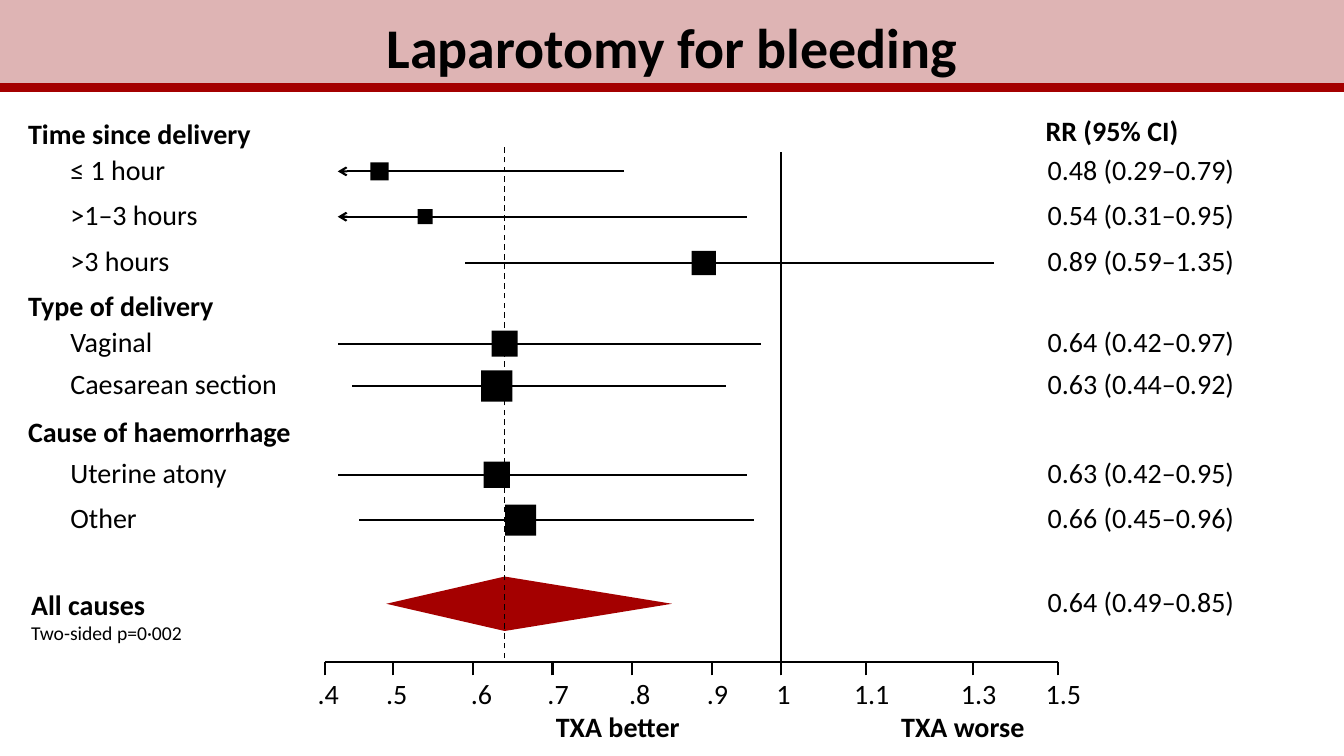
from dataclasses import dataclass
from itertools import pairwise

from lxml.etree import SubElement
from pptx import Presentation
from pptx.dml.color import RGBColor
from pptx.enum.dml import MSO_LINE_DASH_STYLE as Dash
from pptx.enum.shapes import MSO_CONNECTOR as Connector, MSO_SHAPE as Shape
from pptx.enum.text import MSO_ANCHOR as Anchor, PP_ALIGN as Align
from pptx.oxml.ns import qn
from pptx.util import Inches, Pt


@dataclass(frozen=True)
class Theme:
    font: str = "Calibri"
    black: RGBColor = RGBColor(0x00, 0x00, 0x00)
    red: RGBColor = RGBColor(0xA4, 0x00, 0x00)
    pink: RGBColor = RGBColor(0xDE, 0xB4, 0xB4)
    title: int = 40
    body: int = 20
    note: int = 14


THEME = Theme()
WIDTH, HEIGHT = 13.33, 7.5
AXIS_Y, TICK_END = 6.57, 6.7
CLIP_X = 3.35
VALUES_RIGHT = 12.34
TEXT_HEIGHT = 0.5
TEXT_RISE = 0.24  # from the top of a text box to the centre of its row

# value, x of the tick, left of its label, label
TICKS = [
    (0.4, 3.22, 3.15, ".4"), (0.5, 3.9, 3.83, ".5"), (0.6, 4.69, 4.67, ".6"),
    (0.7, 5.48, 5.43, ".7"), (0.8, 6.27, 6.24, ".8"), (0.9, 7.06, 7.01, ".9"),
    (1.0, 7.75, 7.7, "1"), (1.1, 8.59, 8.47, "1.1"), (1.3, 9.65, 9.53, "1.3"),
    (1.5, 10.49, 10.37, "1.5"),
]
HEADINGS = [
    ("Time since delivery", 1.11),
    ("Type of delivery", 2.81),
    ("Cause of haemorrhage", 4.06),
]
# label, centre of the row, ratio, low, high, size of the square
SUBGROUPS = [
    ("≤ 1 hour", 1.7, 0.48, 0.29, 0.79, 0.18),
    (">1–3 hours", 2.15, 0.54, 0.31, 0.95, 0.15),
    (">3 hours", 2.61, 0.89, 0.59, 1.35, 0.24),
    ("Vaginal", 3.41, 0.64, 0.42, 0.97, 0.26),
    ("Caesarean section", 3.83, 0.63, 0.44, 0.92, 0.31),
    ("Uterine atony", 4.71, 0.63, 0.42, 0.95, 0.26),
    ("Other", 5.16, 0.66, 0.45, 0.96, 0.31),
]
POOLED_Y, POOLED_HALF_HEIGHT = 5.99, 0.27
POOLED = (0.64, 0.49, 0.85)


def axis_x(value):
    """Place a ratio on the axis by interpolating between neighbouring ticks."""
    for (low, left, *_), (high, right, *_) in pairwise(TICKS):
        if low <= value <= high:
            return left + (value - low) / (high - low) * (right - left)
    raise ValueError(f"{value} is off the axis")


def set_font(paragraph, size=THEME.body, bold=False):
    font = paragraph.font
    font.name, font.size, font.bold = THEME.font, Pt(size), bold
    font.color.rgb = THEME.black


def add_text(slide, text, left, top, width, bold=False, align=Align.LEFT, inset=True):
    box = slide.shapes.add_textbox(Inches(left), Inches(top), Inches(width), Inches(TEXT_HEIGHT))
    frame = box.text_frame
    frame.word_wrap = True
    if not inset:
        frame.margin_left = frame.margin_right = frame.margin_top = frame.margin_bottom = 0
    paragraph = frame.paragraphs[0]
    paragraph.text, paragraph.alignment = text, align
    set_font(paragraph, bold=bold)
    return frame


def add_line(slide, x1, y1, x2, y2, width=1.5, color=THEME.black, dash=None, arrow=False):
    line = slide.shapes.add_connector(
        Connector.STRAIGHT, Inches(x1), Inches(y1), Inches(x2), Inches(y2))
    line.line.color.rgb, line.line.width = color, Pt(width)
    if dash:
        line.line.dash_style = dash
    properties = line.element.spPr
    if arrow:
        SubElement(properties.get_or_add_ln(), qn("a:tailEnd"), type="arrow")
    SubElement(properties, qn("a:effectLst"))


def paint(shape, color):
    shape.shadow.inherit = False
    shape.fill.solid()
    shape.fill.fore_color.rgb = color
    shape.line.fill.background()


def add_rectangle(slide, left, top, width, height, color):
    rectangle = slide.shapes.add_shape(
        Shape.RECTANGLE, Inches(left), Inches(top), Inches(width), Inches(height))
    paint(rectangle, color)
    return rectangle


def add_title(slide, text):
    frame = add_rectangle(slide, 0, 0, WIDTH, 0.91, THEME.pink).text_frame
    frame.vertical_anchor = Anchor.MIDDLE
    paragraph = frame.paragraphs[0]
    paragraph.text, paragraph.alignment = text, Align.CENTER
    set_font(paragraph, THEME.title, bold=True)
    add_line(slide, 0, 0.87, WIDTH, 0.87, width=6, color=THEME.red)


def add_ratio(slide, y, ratio, low, high):
    add_text(slide, f"{ratio:.2f} ({low:.2f}–{high:.2f})",
             VALUES_RIGHT - 3, y - TEXT_RISE, 3, align=Align.RIGHT)


def add_subgroup(slide, label, y, ratio, low, high, size):
    add_text(slide, label, 0.6, y - TEXT_RISE, 2.7)
    add_ratio(slide, y, ratio, low, high)
    clipped = low < TICKS[0][0]
    add_line(slide, axis_x(high), y, CLIP_X if clipped else axis_x(low), y, arrow=clipped)
    add_rectangle(slide, axis_x(ratio) - size / 2, y - size / 2, size, size, THEME.black)


def add_pooled_diamond(slide):
    middle, left, right = (Inches(axis_x(value)) for value in POOLED)
    center, half = Inches(POOLED_Y), Inches(POOLED_HALF_HEIGHT)
    builder = slide.shapes.build_freeform(left, center)
    builder.add_line_segments([(middle, center - half), (right, center), (middle, center + half)])
    paint(builder.convert_to_shape(), THEME.red)


def add_pooled_result(slide):
    frame = add_text(slide, "All causes", 0.21, 5.78, 3, bold=True)
    note = frame.add_paragraph()
    note.text = "Two-sided p=0·002"
    set_font(note, THEME.note)
    add_ratio(slide, POOLED_Y, *POOLED)
    add_pooled_diamond(slide)
    pooled_x = axis_x(POOLED[0])
    add_line(slide, pooled_x, 6.53, pooled_x, 1.46, width=1, dash=Dash.DASH)


def add_axis(slide):
    add_line(slide, TICKS[0][1], AXIS_Y, TICKS[-1][1], AXIS_Y)
    for _, x, label_left, label in TICKS:
        add_line(slide, x, TICK_END, x, AXIS_Y)
        add_text(slide, label, label_left, 6.71, 0.42, inset=False)
    no_effect_x = axis_x(1.0)
    add_line(slide, no_effect_x, TICK_END, no_effect_x, 1.51)
    add_text(slide, "TXA better", 5.14, 6.99, 1.7, bold=True, align=Align.RIGHT)
    add_text(slide, "TXA worse", 8.84, 6.99, 1.7, bold=True)


def main():
    presentation = Presentation()
    presentation.slide_width, presentation.slide_height = Inches(WIDTH), Inches(HEIGHT)
    slide = presentation.slides.add_slide(presentation.slide_layouts[6])
    add_title(slide, "Laparotomy for bleeding")
    add_text(slide, "RR (95% CI)", 10.37, 1.13, 1.77, bold=True, inset=False)
    for heading, top in HEADINGS:
        add_text(slide, heading, 0.18, top, 3.35, bold=True)
    add_axis(slide)
    for subgroup in SUBGROUPS:
        add_subgroup(slide, *subgroup)
    add_pooled_result(slide)
    presentation.save("out.pptx")


if __name__ == "__main__":
    main()
